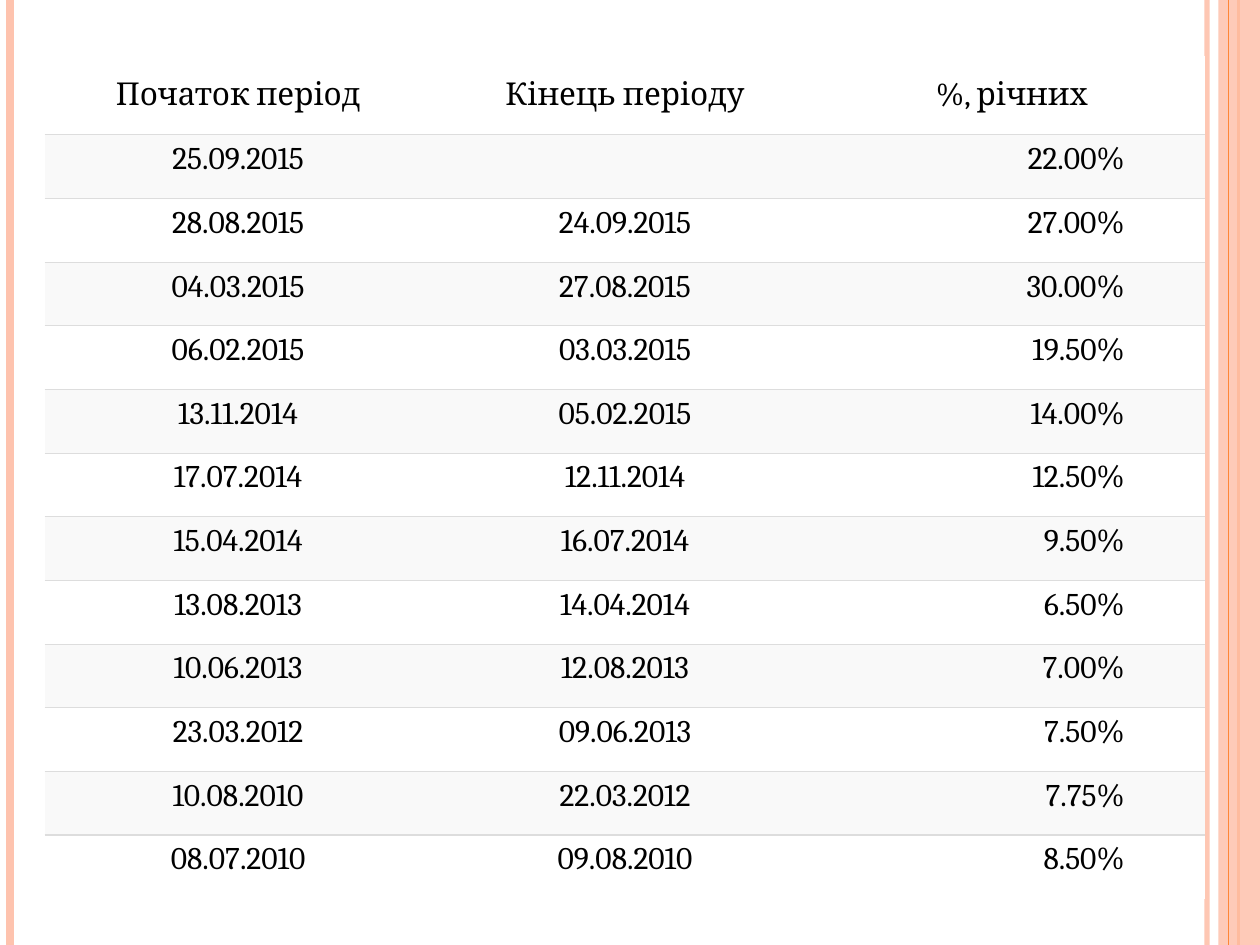
from lxml import etree
from pptx import Presentation
from pptx.dml.color import RGBColor
from pptx.enum.shapes import MSO_CONNECTOR, MSO_SHAPE
from pptx.enum.text import MSO_ANCHOR, PP_ALIGN
from pptx.oxml.ns import qn
from pptx.util import Cm, Pt

STRAIGHT = MSO_CONNECTOR.STRAIGHT
RECTANGLE = MSO_SHAPE.RECTANGLE
TOP, MIDDLE = MSO_ANCHOR.TOP, MSO_ANCHOR.MIDDLE
CENTER, RIGHT = PP_ALIGN.CENTER, PP_ALIGN.RIGHT

COLORS = {
    "peach": "FEC3AE",
    "orange": "FE8637",
    "rule": "DDDDDD",
    "stripe": "F9F9F9",
    "plain": "FFFFFF",
    "text": "000000",
}
FONT = "Cambria"
SLIDE_W, SLIDE_H = 25.4, 19.05

HEADINGS = ("Початок період", "Кінець періоду", "%, річних")
RATES = (
    ("25.09.2015", "", "22.00%"),
    ("28.08.2015", "24.09.2015", "27.00%"),
    ("04.03.2015", "27.08.2015", "30.00%"),
    ("06.02.2015", "03.03.2015", "19.50%"),
    ("13.11.2014", "05.02.2015", "14.00%"),
    ("17.07.2014", "12.11.2014", "12.50%"),
    ("15.04.2014", "16.07.2014", "9.50%"),
    ("13.08.2013", "14.04.2014", "6.50%"),
    ("10.06.2013", "12.08.2013", "7.00%"),
    ("23.03.2012", "09.06.2013", "7.50%"),
    ("10.08.2010", "22.03.2012", "7.75%"),
    ("08.07.2010", "09.08.2010", "8.50%"),
)


def rgb(name):
    return RGBColor.from_string(COLORS[name])


def set_alpha(owner, percent):
    color = owner._element.spPr.find(".//" + qn("a:srgbClr"))
    etree.SubElement(color, qn("a:alpha"), val=str(percent * 1000))


def add_stripe(slide, x, top, height, color, width, alpha=100):
    stripe = slide.shapes.add_connector(
        STRAIGHT, Cm(x), Cm(top), Cm(x), Cm(top + height))
    stripe.line.color.rgb = rgb(color)
    stripe.line.width = Pt(width)
    if alpha < 100:
        set_alpha(stripe, alpha)
    etree.SubElement(stripe._element.spPr, qn("a:effectLst"))


def add_side_stripes(slide, left, top, width, height):
    """Vertical stripes along both edges of the box."""
    right = left + width
    add_stripe(slide, right - 1.07, top, height, "peach", 3, alpha=93)
    add_stripe(slide, left + 0.2, top, height, "peach", 4.5)
    add_stripe(slide, right - 0.43, top, height, "orange", 1.5)

    band = slide.shapes.add_shape(
        RECTANGLE, Cm(right - 0.84), Cm(top), Cm(0.84), Cm(height))
    band.shadow.inherit = False
    band.fill.solid()
    band.fill.fore_color.rgb = rgb("peach")
    set_alpha(band, 87)
    band.line.fill.background()

    add_stripe(slide, right - 0.64, top, height, "orange", 0.75)


def set_text(frame, text, *, size=18, color="text", align=CENTER):
    paragraph = frame.paragraphs[0]
    paragraph.alignment = align
    run = paragraph.add_run()
    run.text = text
    run.font.name = FONT
    run.font.size = Pt(size)
    run.font.color.rgb = rgb(color)


def set_borders(cell, ruled):
    """Draw rules on the named sides and clear the others."""
    props = cell._tc.get_or_add_tcPr()
    for position, side in enumerate("LRTB"):
        border = etree.Element(qn("a:ln" + side), w=str(Pt(0.75)))
        if side in ruled:
            fill = etree.SubElement(border, qn("a:solidFill"))
            etree.SubElement(fill, qn("a:srgbClr"), val=COLORS["rule"])
        else:
            etree.SubElement(border, qn("a:noFill"))
        props.insert(position, border)


def add_rate_table(slide, left, top, width, height):
    rows = (HEADINGS, *RATES)
    header_height = 1.6
    row_height = (height - header_height) / len(RATES)
    table = slide.shapes.add_table(
        len(rows), len(HEADINGS),
        Cm(left), Cm(top), Cm(width), Cm(height)).table

    for column in table.columns:
        column.width = Cm(width / len(HEADINGS))

    for r, values in enumerate(rows):
        is_header = r == 0
        table.rows[r].height = Cm(header_height if is_header else row_height)
        ruled = ("" if is_header else "T") + ("B" if r < len(RATES) else "")
        for c, value in enumerate(values):
            cell = table.cell(r, c)
            is_rate = c == 2 and not is_header
            cell.fill.solid()
            cell.fill.fore_color.rgb = rgb("stripe" if r % 2 else "plain")
            set_borders(cell, ruled)
            cell.vertical_anchor = MIDDLE if is_header else TOP
            cell.margin_left = Cm(0.13)
            cell.margin_right = Cm(1.63 if is_rate else 0.13)
            cell.margin_top = cell.margin_bottom = Cm(
                0.25 if is_header else 0.13)
            if value:
                set_text(cell.text_frame, value,
                         align=RIGHT if is_rate else CENTER)


def main():
    deck = Presentation()
    deck.slide_width, deck.slide_height = Cm(SLIDE_W), Cm(SLIDE_H)
    slide = deck.slides.add_slide(deck.slide_layouts[6])

    # Edge decoration
    add_side_stripes(slide, 0, 0, SLIDE_W, SLIDE_H)
    # Interest rates by period
    add_rate_table(slide, 0.9, 1.12, 23.4, 17)

    deck.save("out.pptx")


if __name__ == "__main__":
    main()
